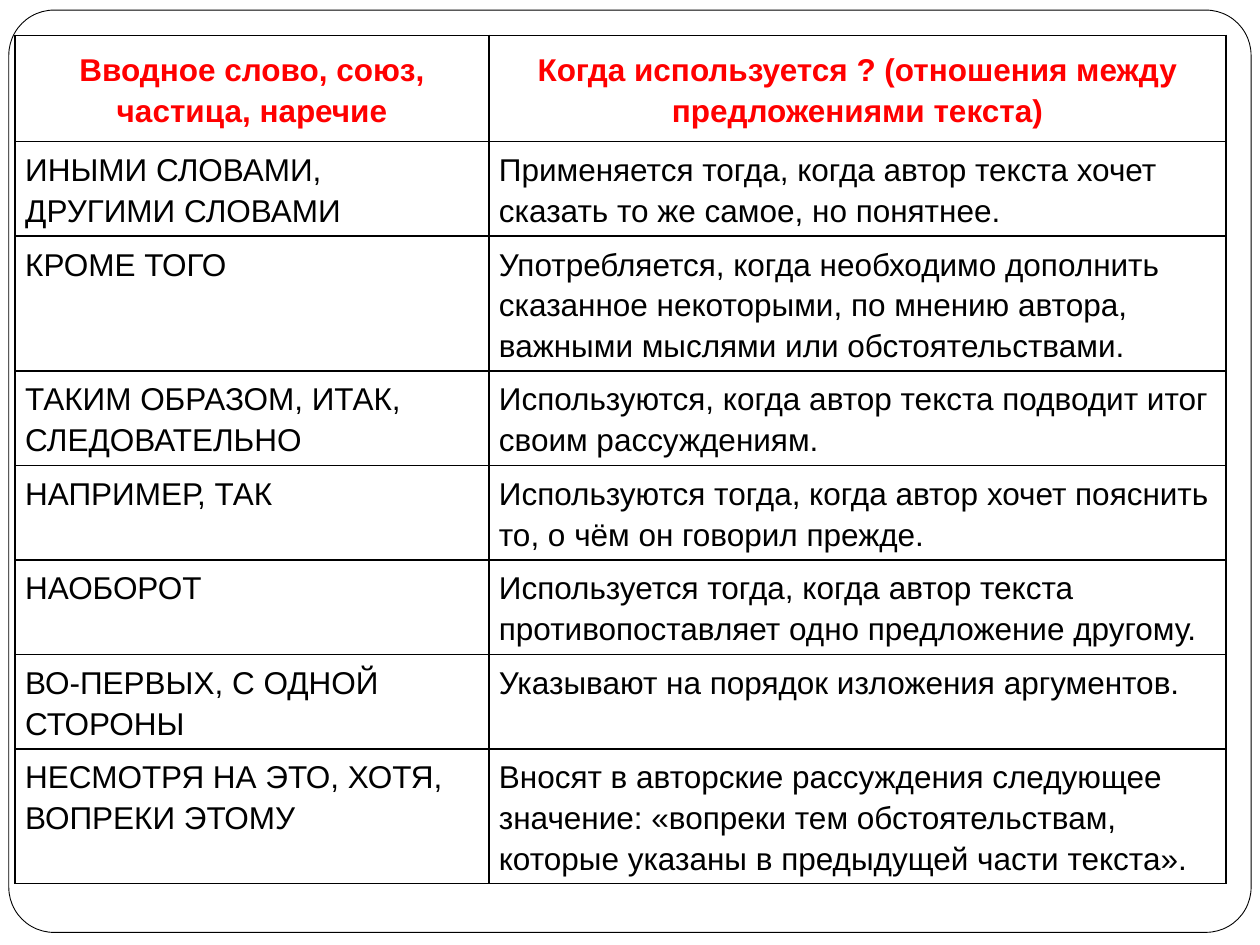
from typing import NamedTuple

from lxml import etree
from pptx import Presentation
from pptx.dml.color import RGBColor
from pptx.enum.shapes import MSO_SHAPE
from pptx.enum.text import PP_ALIGN
from pptx.oxml.ns import qn
from pptx.util import Inches, Pt

ROUNDED = MSO_SHAPE.ROUNDED_RECTANGLE
LEFT, CENTER = PP_ALIGN.LEFT, PP_ALIGN.CENTER
BLACK = RGBColor(0, 0, 0)
RED = RGBColor(0xFF, 0, 0)
WHITE = RGBColor(0xFF, 0xFF, 0xFF)


class Row(NamedTuple):
    words: str
    usage: str
    height: float = 0.75


class CellStyle(NamedTuple):
    font: dict
    align: int
    margin_x: float
    margin_y: float


HEADER = CellStyle({"name": "Arial", "size": Pt(18), "bold": True}, CENTER, 0.16, 0.1)
BODY = CellStyle({"name": "Arial", "size": Pt(18), "bold": False}, LEFT, 0.08, 0.05)
COLUMNS = (3.76, 5.85)
ROWS = [
    Row("Вводное слово, союз, частица, наречие",
        "Когда используется ? (отношения между предложениями текста)", 0.84),
    Row("ИНЫМИ СЛОВАМИ, ДРУГИМИ СЛОВАМИ",
        "Применяется тогда, когда автор текста хочет сказать то же самое, но понятнее."),
    Row("КРОМЕ ТОГО",
        "Употребляется, когда необходимо дополнить сказанное некоторыми, "
        "по мнению автора, важными мыслями или обстоятельствами.", 1.07),
    Row("ТАКИМ ОБРАЗОМ, ИТАК, СЛЕДОВАТЕЛЬНО",
        "Используются, когда автор текста подводит итог своим рассуждениям."),
    Row("НАПРИМЕР, ТАК",
        "Используются тогда, когда автор хочет пояснить то, о чём он говорил прежде."),
    Row("НАОБОРОТ",
        "Используется тогда, когда автор текста противопоставляет одно предложение другому."),
    Row("ВО-ПЕРВЫХ, С ОДНОЙ СТОРОНЫ",
        "Указывают на порядок изложения аргументов."),
    Row("НЕСМОТРЯ НА ЭТО, ХОТЯ, ВОПРЕКИ ЭТОМУ",
        "Вносят в авторские рассуждения следующее значение: «вопреки тем "
        "обстоятельствам, которые указаны в предыдущей части текста».", 1.07),
]


def add_frame(s) -> None:
    sp = s.shapes.add_shape(ROUNDED, Inches(0.07), Inches(0.08), Inches(9.86), Inches(7.32))
    sp.adjustments[0] = 0.049
    sp.shadow.inherit = False
    sp.fill.solid()
    sp.fill.fore_color.rgb = WHITE
    sp.line.color.rgb = BLACK
    sp.line.width = Pt(0.5)


def add_borders(cell) -> None:
    tc_pr = cell._tc.get_or_add_tcPr()
    for i, side in enumerate(("lnL", "lnR", "lnT", "lnB")):
        ln = etree.Element(qn(f"a:{side}"), w=str(Pt(1)))
        fill = etree.SubElement(ln, qn("a:solidFill"))
        etree.SubElement(fill, qn("a:srgbClr"), val=str(BLACK))
        tc_pr.insert(i, ln)  # borders come before the cell fill


def fill_cell(cell, text: str, style: CellStyle, color: RGBColor) -> None:
    cell.margin_left = cell.margin_right = Inches(style.margin_x)
    cell.margin_top = cell.margin_bottom = Inches(style.margin_y)
    cell.fill.background()
    add_borders(cell)
    p = cell.text_frame.paragraphs[0]
    p.alignment = style.align
    p.line_spacing = 1.15
    r = p.add_run()
    r.text = text
    for name, value in style.font.items():
        setattr(r.font, name, value)
    r.font.color.rgb = color


def add_word_table(s) -> None:
    height = sum(row.height for row in ROWS)
    table = s.shapes.add_table(len(ROWS), len(COLUMNS), Inches(0.12), Inches(0.28),
                               Inches(sum(COLUMNS)), Inches(height)).table
    table.horz_banding = False
    for column, width in zip(table.columns, COLUMNS):
        column.width = Inches(width)
    for i, row in enumerate(ROWS):
        table.rows[i].height = Inches(row.height)
        style, color = (BODY, BLACK) if i else (HEADER, RED)
        for j, text in enumerate((row.words, row.usage)):
            fill_cell(table.cell(i, j), text, style, color)


def main() -> None:
    prs = Presentation()
    prs.slide_width, prs.slide_height = Inches(10), Inches(7.5)
    s = prs.slides.add_slide(prs.slide_layouts[6])  # blank layout
    add_frame(s)
    add_word_table(s)
    prs.save("out.pptx")


if __name__ == "__main__":
    main()
